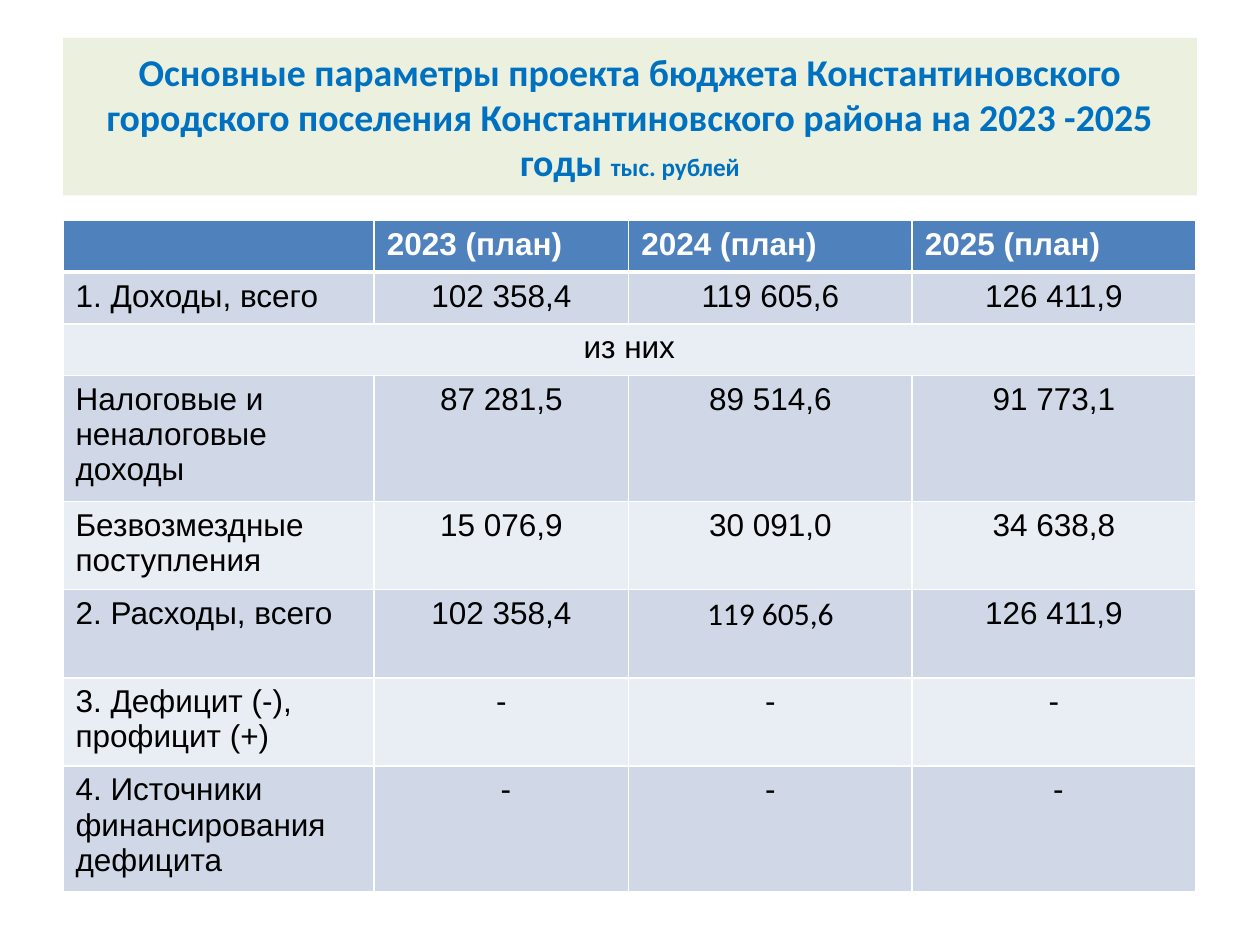
from lxml.etree import SubElement
from pptx import Presentation
from pptx.dml.color import RGBColor
from pptx.enum.text import MSO_ANCHOR, MSO_AUTO_SIZE, PP_ALIGN
from pptx.oxml.ns import qn
from pptx.util import Inches, Pt

WHITE = RGBColor(0xFF, 0xFF, 0xFF)
BLACK = RGBColor(0, 0, 0)
TITLE_BLUE = RGBColor(0x00, 0x70, 0xC0)
TITLE_FILL = RGBColor(0xEB, 0xF1, 0xDE)
HEADER_FILL = RGBColor(0x4F, 0x81, 0xBD)
BAND_FILLS = (RGBColor(0xD0, 0xD8, 0xE8), RGBColor(0xE9, 0xED, 0xF4))

COLUMN_WIDTHS = (2.47, 2.02, 2.25, 2.25)
ROW_HEIGHTS = (0.41, 0.41, 0.41, 1, 0.7, 0.7, 0.7, 1)
BUDGET = (
    ("", "2023 (план)", "2024 (план)", "2025 (план)"),
    ("1. Доходы, всего", "102 358,4", "119 605,6", "126 411,9"),
    ("из них",),
    ("Налоговые и неналоговые доходы", "87 281,5", "89 514,6", "91 773,1"),
    ("Безвозмездные поступления", "15 076,9", "30 091,0", "34 638,8"),
    ("2. Расходы, всего", "102 358,4", "119 605,6", "126 411,9"),
    ("3. Дефицит (-), профицит (+)", "-", "-", "-"),
    ("4. Источники финансирования дефицита", " -", "-", " -"),
)
EXPENSES_2024 = (5, 2)  # the one cell set in Calibri


def add_text(paragraph, text, *, size=18, font="Arial", color=BLACK,
             bold=False, align=PP_ALIGN.LEFT):
    paragraph.alignment = align
    run = paragraph.add_run()
    run.text = text
    run.font.size = Pt(size)
    run.font.name = font
    run.font.bold = bold
    run.font.color.rgb = color


def add_borders(cell, bottom):
    properties = cell._tc.get_or_add_tcPr()
    for side, width in (("L", 1), ("R", 1), ("T", 1), ("B", bottom)):
        line = SubElement(properties, qn(f"a:ln{side}"), w=str(Pt(width)))
        fill = SubElement(line, qn("a:solidFill"))
        SubElement(fill, qn("a:srgbClr"), val=str(WHITE))


class BudgetSlide:
    def __init__(self, presentation):
        self.slide = presentation.slides.add_slide(presentation.slide_layouts[5])

    def title(self, heading, unit):
        title = self.slide.shapes.title
        title.left, title.top = Inches(0.5), Inches(0.3)
        title.width, title.height = Inches(9), Inches(1.25)
        title.fill.solid()
        title.fill.fore_color.rgb = TITLE_FILL
        frame = title.text_frame
        frame.word_wrap = True
        frame.auto_size = MSO_AUTO_SIZE.NONE
        frame.vertical_anchor = MSO_ANCHOR.MIDDLE
        for text, size in ((heading, 21.6), (unit, 14.4)):
            add_text(frame.paragraphs[0], text, size=size, font="Calibri",
                     color=TITLE_BLUE, bold=True, align=PP_ALIGN.CENTER)

    def table(self, rows):
        table = self.slide.shapes.add_table(
            len(rows), len(COLUMN_WIDTHS), Inches(0.5), Inches(1.75),
            Inches(sum(COLUMN_WIDTHS)), Inches(sum(ROW_HEIGHTS))).table
        for column, width in zip(table.columns, COLUMN_WIDTHS):
            column.width = Inches(width)
        for row, height in zip(table.rows, ROW_HEIGHTS):
            row.height = Inches(height)

        for r, texts in enumerate(rows):
            header, subheading = r == 0, len(texts) == 1
            # Borders and banded fills
            for cell in table.rows[r].cells:
                add_borders(cell, bottom=3 if header else 1)
                cell.fill.solid()
                cell.fill.fore_color.rgb = (
                    HEADER_FILL if header else BAND_FILLS[(r - 1) % 2])
            if subheading:
                table.cell(r, 0).merge(table.cell(r, len(COLUMN_WIDTHS) - 1))
            # Labels on the left, figures centred
            for c, text in enumerate(texts):
                if not text:
                    continue
                centred = subheading or (c > 0 and not header)
                add_text(table.cell(r, c).text_frame.paragraphs[0], text,
                         font="Calibri" if (r, c) == EXPENSES_2024 else "Arial",
                         color=WHITE if header else BLACK, bold=header,
                         align=PP_ALIGN.CENTER if centred else PP_ALIGN.LEFT)


def main():
    presentation = Presentation()
    presentation.slide_width, presentation.slide_height = Inches(10), Inches(7.5)
    budget = BudgetSlide(presentation)
    budget.title("Основные параметры проекта бюджета Константиновского городского "
                 "поселения Константиновского района на 2023 -2025 годы ",
                 "тыс. рублей")
    budget.table(BUDGET)
    presentation.save("out.pptx")


if __name__ == "__main__":
    main()
